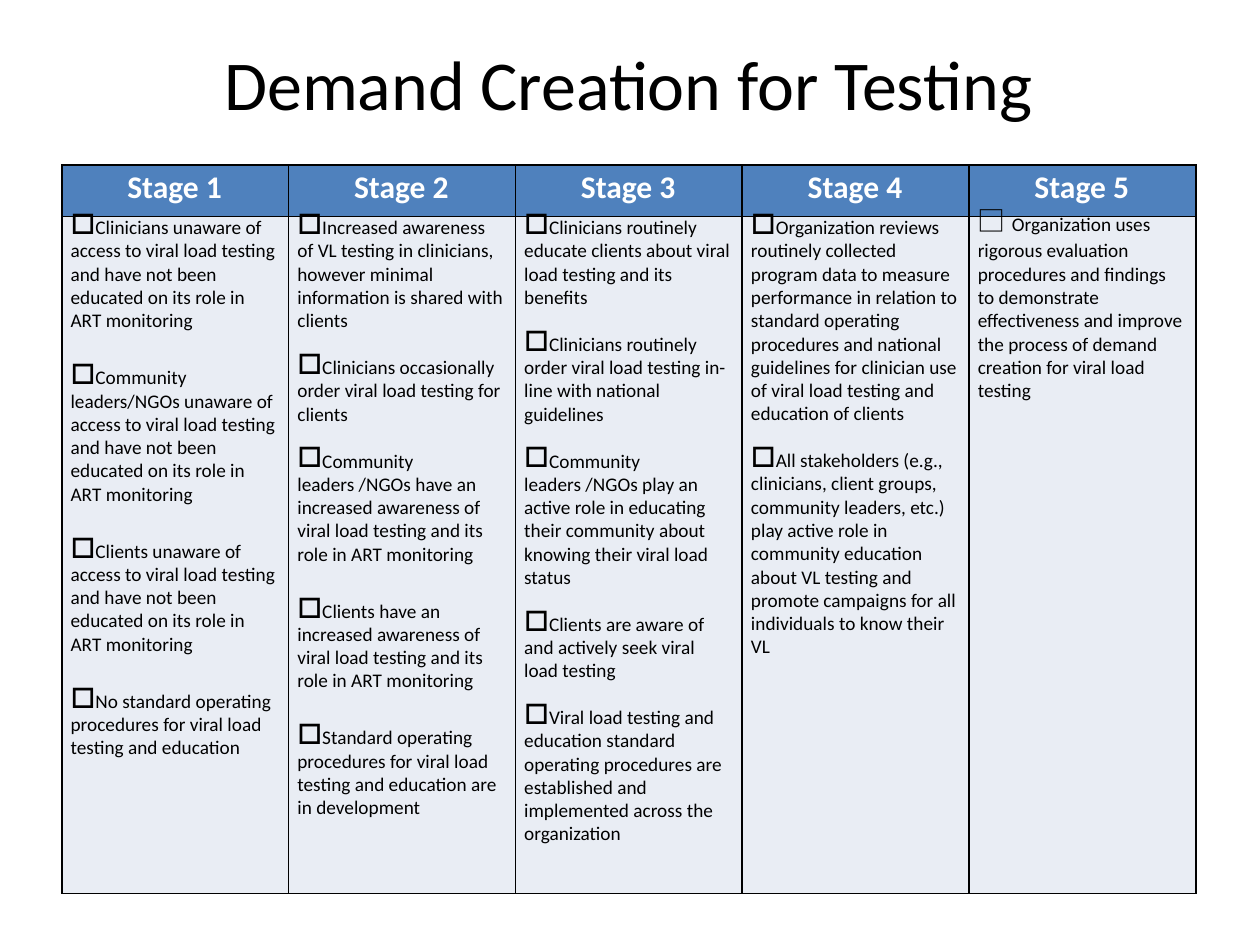
from lxml.etree import SubElement
from pptx import Presentation
from pptx.dml.color import RGBColor
from pptx.enum.text import MSO_ANCHOR
from pptx.oxml.ns import qn
from pptx.util import Inches, Pt

COLORS = {"ink": "000000", "white": "FFFFFF", "header": "4F81BD", "body": "E9EDF4"}
TOP_GAP, NARROW_GAP, WIDE_GAP = 5, 13.5, 19.3
BODY_LINE = Pt(13.3)
BOX_FONT = "Noto Sans CJK JP"

CLIENTS_ROLE = "access to viral load testing and have not been\veducated on its role in\vART monitoring"
AWARENESS = "an increased awareness of\vviral load testing and its\vrole in ART monitoring"

stages = [
    [
        (TOP_GAP, f"Clinicians unaware of\v{CLIENTS_ROLE}"),
        (WIDE_GAP, f"Community\vleaders/NGOs unaware of {CLIENTS_ROLE}"),
        (WIDE_GAP, f"Clients unaware of\v{CLIENTS_ROLE}"),
        (WIDE_GAP, "No standard operating\vprocedures for viral load testing and education"),
    ],
    [
        (TOP_GAP, "Increased awareness\vof VL testing in clinicians, however minimal\v"
                  "information is shared with\vclients"),
        (NARROW_GAP, "Clinicians occasionally\vorder viral load testing for clients"),
        (NARROW_GAP, f"Community\vleaders /NGOs have {AWARENESS}"),
        (WIDE_GAP, f"Clients have {AWARENESS}"),
        (WIDE_GAP, "Standard operating\vprocedures for viral load testing and education are\v"
                   "in development"),
    ],
    [
        (TOP_GAP, "Clinicians routinely\veducate clients about viral load testing and its\vbenefits"),
        (NARROW_GAP, "Clinicians routinely\vorder viral load testing in-\vline with national\vguidelines"),
        (NARROW_GAP, "Community\vleaders /NGOs play an\vactive role in educating\v"
                     "their community about\vknowing their viral load status"),
        (NARROW_GAP, "Clients are aware of\vand actively seek viral\vload testing"),
        (NARROW_GAP, "Viral load testing and\veducation standard operating procedures are "
                     "established and\vimplemented across the organization"),
    ],
    [
        (TOP_GAP, "Organization reviews\vroutinely collected\vprogram data to measure performance "
                  "in relation to standard operating procedures and national guidelines for "
                  "clinician use\vof viral load testing and\veducation of clients"),
        (NARROW_GAP, "All stakeholders (e.g.,\vclinicians, client groups, community leaders, etc.)\v"
                     "play active role in\vcommunity education\vabout VL testing and\v"
                     "promote campaigns for all individuals to know their\vVL"),
    ],
    [
        (TOP_GAP, "Organization uses\vrigorous evaluation procedures and findings\vto demonstrate "
                  "effectiveness and improve the process of demand creation for viral load\vtesting"),
    ],
]


def write(paragraph, text, size=11, color="ink", bold=False, font="Calibri",
          line=None, before=0, left=0.07, checkbox=False):
    for position, piece in enumerate(text.split("\v")):
        if position:
            paragraph.add_line_break()
        run = paragraph.add_run()
        run.text = piece
        run.font.size = Pt(size)
        run.font.name = font
        run.font.bold = bold
        run.font.color.rgb = RGBColor.from_string(COLORS[color])
    if line:
        paragraph.line_spacing = line
    paragraph.space_before = Pt(before)
    properties = paragraph._p.get_or_add_pPr()
    properties.set("marL", str(Inches(left)))
    properties.set("indent", "0")
    if checkbox:
        SubElement(properties, qn("a:buSzPct"), val="145000")
        SubElement(properties, qn("a:buChar"), char="□")


def style(cell, fill, top):
    cell.margin_left = cell.margin_right = cell.margin_bottom = 0
    cell.margin_top = Inches(top)
    properties = cell._tc.get_or_add_tcPr()
    for side in ("a:lnL", "a:lnR", "a:lnT", "a:lnB"):
        border = SubElement(properties, qn(side), w=str(Pt(1)))
        ink = SubElement(border, qn("a:solidFill"))
        SubElement(ink, qn("a:srgbClr"), val=COLORS["ink"])
    cell.fill.solid()
    cell.fill.fore_color.rgb = RGBColor.from_string(COLORS[fill])


deck = Presentation()
deck.slide_width, deck.slide_height = Inches(10), Inches(7.5)
slide = deck.slides.add_slide(deck.slide_layouts[6])

heading = slide.shapes.add_textbox(Inches(1.77), Inches(0.3), Inches(6.45), Inches(0.71)).text_frame
heading.word_wrap = True
heading.vertical_anchor = MSO_ANCHOR.MIDDLE
heading.margin_left = heading.margin_right = heading.margin_top = heading.margin_bottom = 0
write(heading.paragraphs[0], "Demand Creation for Testing", size=40, left=0.01)

maturity = slide.shapes.add_table(2, len(stages), Inches(0.49), Inches(1.31),
                                  Inches(9), Inches(5.78)).table
maturity.rows[0].height = Inches(0.41)
maturity.rows[1].height = Inches(5.37)

for index, criteria in enumerate(stages):
    maturity.columns[index].width = Inches(1.8)
    label, details = maturity.cell(0, index), maturity.cell(1, index)
    style(label, "header", 0.03)
    style(details, "body", 0)
    write(label.text_frame.paragraphs[0], f"Stage {index + 1}", size=18, color="white",
          bold=True, before=1.9, left=0.52)

    final_stage = index == len(stages) - 1
    content = details.text_frame
    for order, (gap, criterion) in enumerate(criteria):
        entry = content.add_paragraph() if order else content.paragraphs[0]
        if final_stage:
            write(entry, "□ ", size=16, font=BOX_FONT)
        write(entry, criterion, line=BODY_LINE, before=gap, checkbox=not final_stage)

deck.save("out.pptx")
